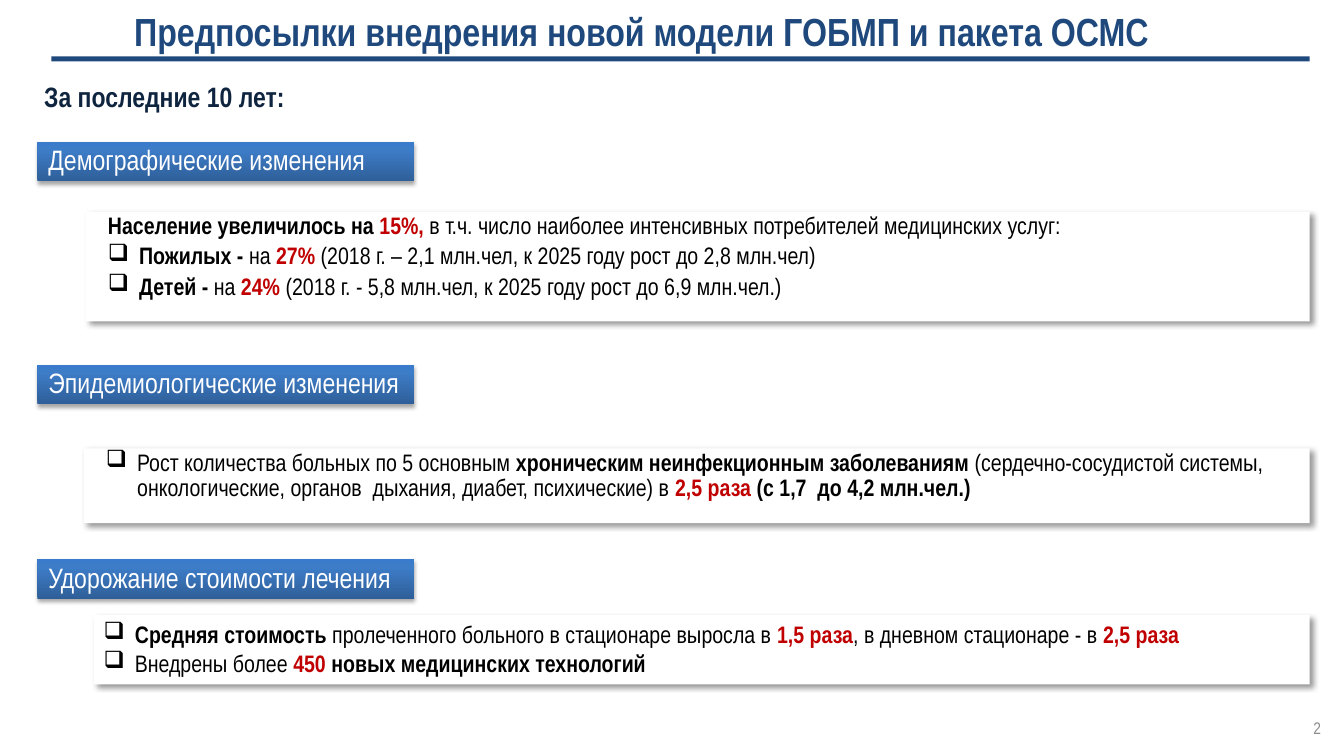
from dataclasses import dataclass
from lxml.etree import SubElement as Sub
from pptx import Presentation
from pptx.dml.color import RGBColor as Rgb
from pptx.enum.shapes import MSO_SHAPE as Kind
from pptx.enum.text import MSO_ANCHOR as Anchor, PP_ALIGN as Align
from pptx.oxml import parse_xml
from pptx.oxml.ns import nsdecls, qn
from pptx.util import Inches, Pt


@dataclass
class Theme:
    font: str = "Arial Narrow"
    navy: str = "1F497D"
    ink: str = "0F243E"
    black: str = "000000"
    red: str = "C00000"
    white: str = "FFFFFF"
    grey: str = "8C8C8C"
    blend: tuple = ((0, "2F5F99"), (80, "3D7CC7"), (100, "3A7CCB"))
    head: float = 28
    lead: float = 20
    body: float = 17
    note: float = 12


look = Theme()
deck = Presentation()
deck.slide_width, deck.slide_height = Inches(13.33), Inches(7.5)
slide = deck.slides.add_slide(deck.slide_layouts[5])
shapes = slide.shapes


def area(x, y, w, h):
    """Turn shares of the slide, in percent, into lengths."""
    wide, high = deck.slide_width / 100, deck.slide_height / 100
    return int(x * wide), int(y * high), int(w * wide), int(h * high)


def style(para, size, color, bold=None):
    font = para.font
    font.name, font.size, font.bold = look.font, Pt(size), bold
    font.color.rgb = Rgb.from_string(color)


# Title and its rule
title = shapes.title
title.left, title.top, title.width, title.height = area(2.55, 0.27, 90.32, 7.6)
title.text_frame.text = "Предпосылки внедрения новой модели ГОБМП и пакета ОСМС"
title.text_frame.vertical_anchor = Anchor.TOP
para = title.text_frame.paragraphs[0]
para.alignment = Align.CENTER
style(para, look.head, look.navy, True)

rule = shapes.add_shape(Kind.RECTANGLE, *area(3.83, 7.47, 93.62, 0.67))
rule.shadow.inherit = False
rule.fill.solid()
rule.fill.fore_color.rgb = Rgb.from_string(look.navy)
rule.line.fill.background()

# Lead line and page number
labels = (
    ("За последние 10 лет:", (2.55, 9.87, 20.55, 5.87),
     look.lead, look.ink, True, Align.LEFT, Anchor.TOP),
    ("2", (75.69, 93.6, 23.33, 5.33),
     look.note, look.grey, False, Align.RIGHT, Anchor.MIDDLE),
)
for text, place, size, color, bold, side, anchor in labels:
    frame = shapes.add_textbox(*area(*place)).text_frame
    frame.word_wrap, frame.vertical_anchor = True, anchor
    para = frame.paragraphs[0]
    para.text, para.alignment = text, side
    style(para, size, color, bold)

# Sections: tag text and top; panel left, top, height, insets and spacing;
# lines as (bullet, runs), where a run is marked b for bold, r for bold red
inset = (0.22, 0.02, 0.12, 0.02)
plain = (0.1, 0.05, 0.1, 0.05)
tight = (0.9, 3.5)
loose = (1, 0)
groups = (
    ("Демографические изменения", 18.8, (6.38, 28, 14.53), inset, tight, (
        (False, (("Население увеличилось на ", "b"), ("15%, ", "r"),
                 ("в т.ч. число наиболее интенсивных потребителей медицинских услуг:", ""))),
        (True, (("Пожилых - ", "b"), ("на ", ""), ("27% ", "r"),
                ("(2018 г. – 2,1 млн.чел, к 2025 году рост до 2,8 млн.чел)", ""))),
        (True, (("Детей - ", "b"), ("на ", ""), ("24% ", "r"),
                ("(2018 г. - 5,8 млн.чел, к 2025 году рост до 6,9 млн.чел.)", ""))),
    )),
    ("Эпидемиологические изменения", 48.27, (6.23, 59.33, 9.87), inset, tight, (
        (True, (("Рост количества больных по 5 основным ", ""),
                ("хроническим неинфекционным заболеваниям", "b"),
                (" (сердечно-сосудистой системы, онкологические, органов  дыхания, "
                 "диабет, психические) в ", ""),
                ("2,5 раза ", "r"), ("(с 1,7  до 4,2 млн.чел.)", "b"))),
    )),
    ("Удорожание стоимости лечения", 74, (6.98, 81.33, 9.2), plain, loose, (
        (True, (("Средняя стоимость ", "b"),
                ("пролеченного больного в стационаре выросла в ", ""),
                ("1,5 раза", "r"), (", в дневном стационаре - в ", ""),
                ("2,5 раза", "r"))),
        (True, (("Внедрены более ", ""), ("450", "r"),
                (" новых медицинских технологий", "b"))),
    )),
)
right = 97.45
hang = Inches(0.31)
stops = "".join(
    f'<a:gs pos="{at * 1000}"><a:srgbClr val="{color}"/></a:gs>'
    for at, color in look.blend)
grad = (f'<a:gradFill {nsdecls("a")} rotWithShape="1"><a:gsLst>{stops}</a:gsLst>'
        '<a:lin ang="16200000" scaled="0"/></a:gradFill>')

for name, top, (left, y, high), pads, (lead, after), lines in groups:
    panel = shapes.add_shape(Kind.RECTANGLE, *area(left, y, right - left, high))
    tag = shapes.add_shape(Kind.RECTANGLE, *area(2.78, top, 28.06, 5.2))

    # Fill, shadow and frame: alpha, blur, distance, angle
    for box, edges, shade in ((panel, pads, (40, 4, 3, 45)),
                              (tag, (0.11,) * 4, (35, 3.1, 1.8, 90))):
        box.fill.solid()
        box.fill.fore_color.rgb = Rgb.from_string(look.white)
        box.line.fill.background()
        box.shadow.inherit = False
        alpha, blur, dist, turn = shade
        glow = Sub(box._element.spPr.find(qn("a:effectLst")), qn("a:outerShdw"),
                   blurRad=str(Pt(blur)), dist=str(Pt(dist)),
                   dir=str(turn * 60000), algn="tl", rotWithShape="0")
        tint = Sub(glow, qn("a:srgbClr"), val=look.black)
        Sub(tint, qn("a:alpha"), val=str(alpha * 1000))
        frame = box.text_frame
        frame.word_wrap = True
        (frame.margin_left, frame.margin_top,
         frame.margin_right, frame.margin_bottom) = map(Inches, edges)

    # Tag
    flat = tag._element.spPr.find(qn("a:solidFill"))
    flat.getparent().replace(flat, parse_xml(grad))
    tag.text_frame.vertical_anchor = Anchor.MIDDLE
    para = tag.text_frame.paragraphs[0]
    para.text, para.alignment, para.line_spacing = name, Align.LEFT, 0.9
    style(para, look.lead, look.white)

    # Panel
    frame = panel.text_frame
    frame.vertical_anchor = Anchor.TOP
    for row, (dot, runs) in enumerate(lines):
        para = frame.add_paragraph() if row else frame.paragraphs[0]
        para.alignment = Align.LEFT
        para.line_spacing, para.space_after = lead, Pt(after)
        if dot:
            props = para._p.get_or_add_pPr()
            props.set("marL", str(hang))
            props.set("indent", str(-hang))
            Sub(props, qn("a:buChar"), char="❑")
        style(para, look.body, look.black)
        for text, mark in runs:
            run = para.add_run()
            run.text = text
            run.font.bold = bool(mark)
            if mark == "r":
                run.font.color.rgb = Rgb.from_string(look.red)

deck.save("out.pptx")
